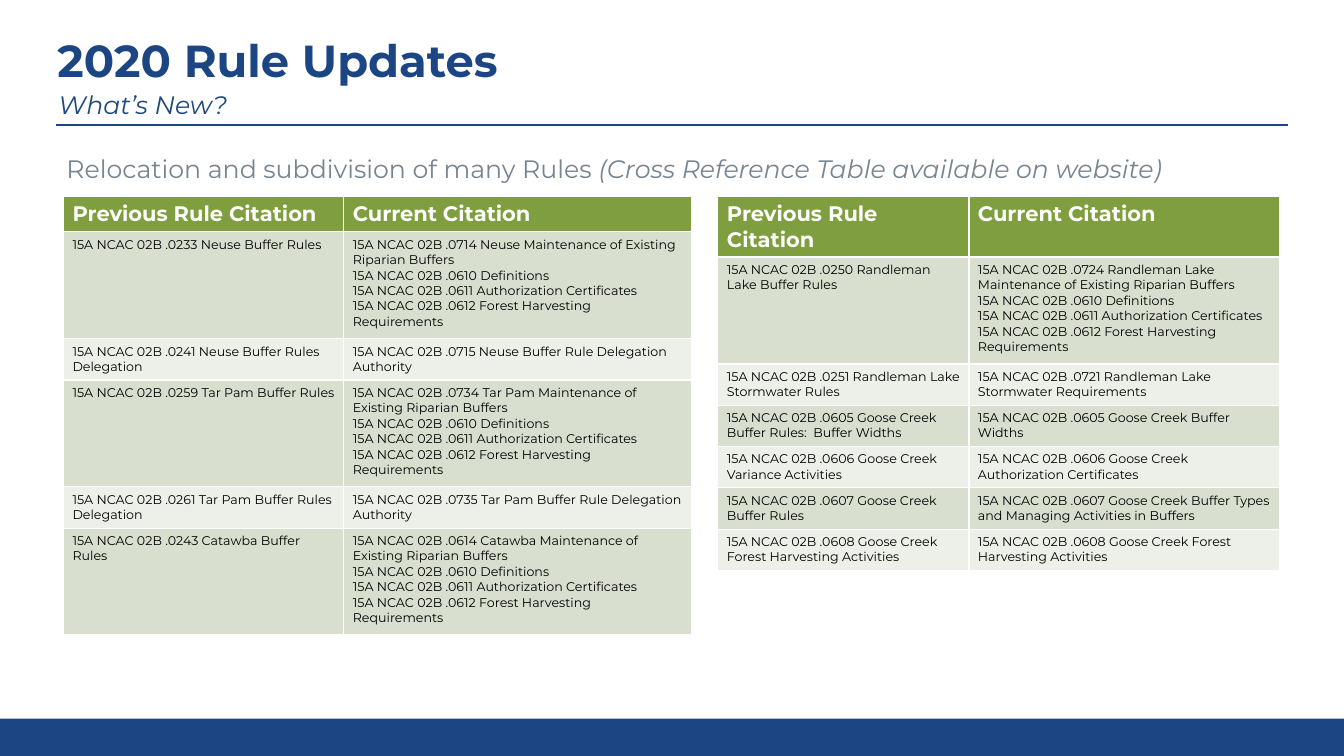
from lxml import etree
from pptx import Presentation
from pptx.dml.color import RGBColor
from pptx.enum.shapes import MSO_CONNECTOR, MSO_SHAPE
from pptx.enum.text import MSO_ANCHOR, PP_ALIGN
from pptx.oxml.ns import qn
from pptx.util import Inches, Pt

STRAIGHT = MSO_CONNECTOR.STRAIGHT
RECTANGLE = MSO_SHAPE.RECTANGLE
MIDDLE, TOP = MSO_ANCHOR.MIDDLE, MSO_ANCHOR.TOP
LEFT = PP_ALIGN.LEFT

FONT = "Montserrat"
COLORS = {
    "navy": "1C4584",
    "subtitle": "1F497D",
    "gray": "778591",
    "header": "7F9E3F",
    "odd row": "D8DFCF",
    "even row": "ECF0E8",
    "white": "FFFFFF",
    "black": "000000",
}
CODE = "15A NCAC 02B "
HEADINGS = ("Previous Rule Citation", "Current Citation")
SHARED_RULES = [
    ".0610 Definitions",
    ".0611 Authorization Certificates",
    ".0612 Forest Harvesting Requirements",
]
RIVER_RULES = [
    (".0233 Neuse Buffer Rules",
     [".0714 Neuse Maintenance of Existing Riparian Buffers", *SHARED_RULES]),
    (".0241 Neuse Buffer Rules Delegation",
     [".0715 Neuse Buffer Rule Delegation Authority"]),
    (".0259 Tar Pam Buffer Rules",
     [".0734 Tar Pam Maintenance of Existing Riparian Buffers", *SHARED_RULES]),
    (".0261 Tar Pam Buffer Rules Delegation",
     [".0735 Tar Pam Buffer Rule Delegation Authority"]),
    (".0243 Catawba Buffer Rules",
     [".0614 Catawba Maintenance of Existing Riparian Buffers", *SHARED_RULES]),
]
LAKE_RULES = [
    (".0250 Randleman Lake Buffer Rules",
     [".0724 Randleman Lake Maintenance of Existing Riparian Buffers", *SHARED_RULES]),
    (".0251 Randleman Lake Stormwater Rules",
     [".0721 Randleman Lake Stormwater Requirements"]),
    (".0605 Goose Creek Buffer Rules:  Buffer Widths",
     [".0605 Goose Creek Buffer Widths"]),
    (".0606 Goose Creek Variance Activities",
     [".0606 Goose Creek Authorization Certificates"]),
    (".0607 Goose Creek Buffer Rules",
     [".0607 Goose Creek Buffer Types and Managing Activities in Buffers"]),
    (".0608 Goose Creek Forest Harvesting Activities",
     [".0608 Goose Creek Forest Harvesting Activities"]),
]


def color(name):
    return RGBColor.from_string(COLORS[name])


def style_font(para, size, color_name, bold=False, italic=None):
    font = para.font
    font.name, font.size = FONT, Pt(size)
    font.bold, font.italic = bold, italic
    font.color.rgb = color(color_name)


def add_footer_bar(page):
    bar = page.shapes.add_shape(RECTANGLE, 0, Inches(7.13), Inches(13.33), Inches(0.37))
    bar.shadow.inherit = False
    bar.fill.solid()
    bar.fill.fore_color.rgb = color("navy")
    bar.line.fill.background()


def add_title_rule(page):
    rule = page.shapes.add_connector(
        STRAIGHT, Inches(0.56), Inches(1.24), Inches(12.77), Inches(1.24))
    rule.line.color.rgb = color("navy")
    rule.line.width = Pt(1.5)
    etree.SubElement(rule._element.spPr, qn("a:effectLst"))


def set_title(page, text):
    title = page.shapes.title
    title.left, title.top = Inches(0.47), Inches(0.32)
    title.width, title.height = Inches(8.89), Inches(0.61)
    title.text_frame.text = text
    title.text_frame.vertical_anchor = MIDDLE
    para = title.text_frame.paragraphs[0]
    para.alignment, para.line_spacing = LEFT, 0.9
    style_font(para, 32, "navy", bold=True)


def add_text(page, position, spans, color_name, anchor):
    """Add a one-paragraph box; spans are (text, italic) pairs."""
    box = page.shapes.add_textbox(*map(Inches, position))
    frame = box.text_frame
    frame.word_wrap = True
    frame.vertical_anchor = anchor
    para = frame.paragraphs[0]
    style_font(para, 18, color_name)
    for text, italic in spans:
        span = para.add_run()
        span.text = text
        span.font.italic = italic


def fill_cell(cell, lines, size, text_color, fill, bold=False):
    cell.margin_left = cell.margin_right = Inches(0.09)
    cell.margin_top = cell.margin_bottom = Inches(0.05)
    cell.fill.solid()
    cell.fill.fore_color.rgb = color(fill)
    cell.text = "\n".join(lines)
    for para in cell.text_frame.paragraphs:
        style_font(para, size, text_color, bold)


def add_rule_table(page, left, widths, rules):
    heights = [0.34] + [1.06 if len(current) > 1 else 0.41 for _, current in rules]
    table = page.shapes.add_table(
        len(heights), len(widths), Inches(left), Inches(1.95),
        Inches(sum(widths)), Inches(sum(heights))).table
    for column, width in zip(table.columns, widths):
        column.width = Inches(width)
    for row, height in zip(table.rows, heights):
        row.height = Inches(height)
    for cell, heading in zip(table.rows[0].cells, HEADINGS):
        fill_cell(cell, [heading], 15, "white", "header", bold=True)
    for index, (previous, current) in enumerate(rules, start=1):
        fill = "odd row" if index % 2 else "even row"
        for cell, names in zip(table.rows[index].cells, ([previous], current)):
            fill_cell(cell, [CODE + name for name in names], 9, "black", fill)


def main():
    deck = Presentation()
    deck.slide_width, deck.slide_height = Inches(13.33), Inches(7.5)
    page = deck.slides.add_slide(deck.slide_layouts.get_by_name("Title Only"))
    add_footer_bar(page)
    add_title_rule(page)
    add_text(page, (0.56, 1.47, 12.23, 0.6),
             [("Relocation and subdivision of many Rules ", False),
              ("(Cross Reference Table available on website)", True)], "gray", TOP)
    set_title(page, "2020 Rule Updates")
    add_text(page, (0.48, 0.73, 7.05, 0.62), [("What’s New?", True)], "subtitle", MIDDLE)
    add_rule_table(page, 0.63, (2.78, 3.45), RIVER_RULES)
    add_rule_table(page, 7.12, (2.49, 3.08), LAKE_RULES)
    deck.save("out.pptx")


if __name__ == "__main__":
    main()
